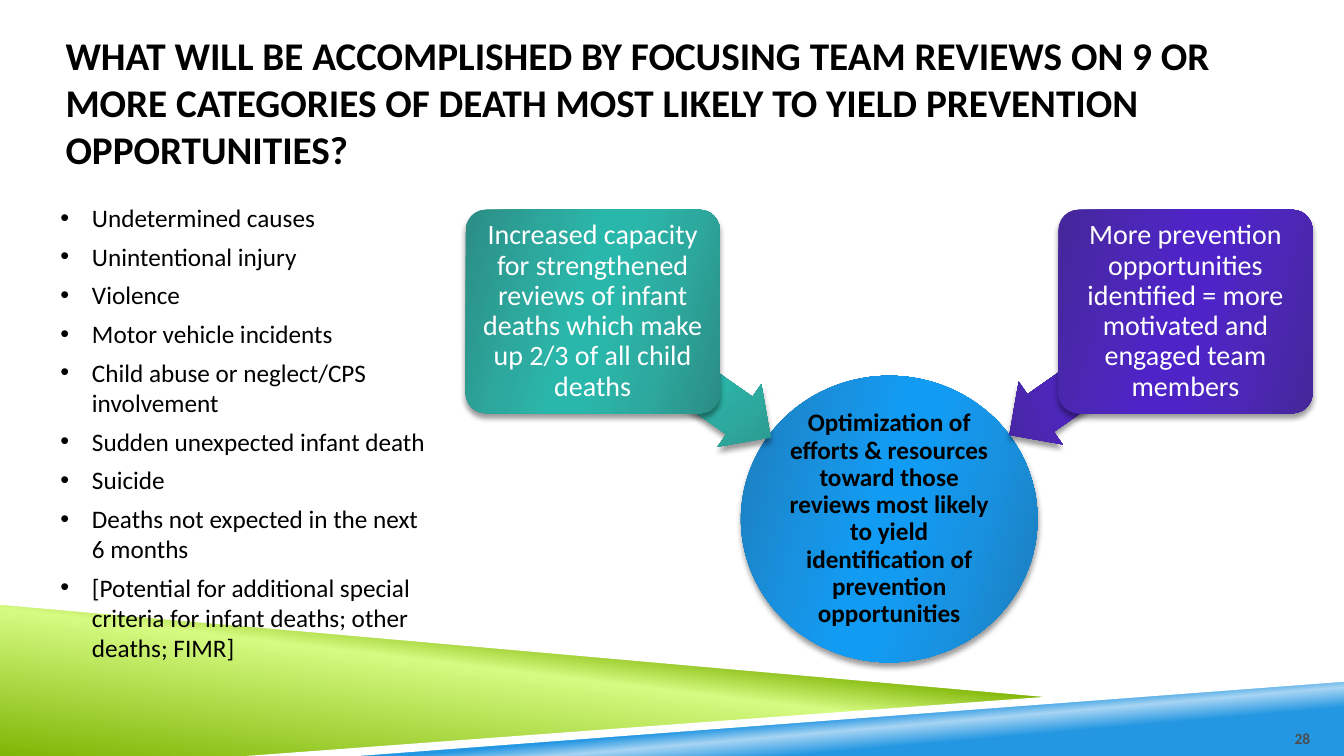
from dataclasses import dataclass

from lxml.etree import SubElement
from pptx import Presentation
from pptx.dml.color import RGBColor
from pptx.enum.shapes import MSO_SHAPE
from pptx.enum.text import MSO_ANCHOR, MSO_AUTO_SIZE, PP_ALIGN
from pptx.oxml.ns import qn
from pptx.util import Pt


@dataclass(frozen=True)
class Theme:
    font: str = "Calibri"
    black: str = "000000"
    white: str = "FFFFFF"
    gray: str = "4D4D4D"
    green: tuple = ((0, "80B606"), (52, "D6FB82"), (66, "80B606"))
    sky: tuple = ((28, "2397E2"), (40, "A7D5F3"), (48, "2397E2"))
    blue: tuple = ("1D7CB9", "1892E1", "129BF3")
    teal: tuple = ("2B8D85", "2DAA9F", "2AB7AB")
    purple: tuple = ("452799", "4D27B9", "4E23C8")
    head: int = 28
    card: int = 20
    body: int = 18
    foot: int = 11


theme = Theme()


def write(frame, text, size=theme.body, color=theme.black, bold=False,
          align=PP_ALIGN.LEFT, anchor=MSO_ANCHOR.MIDDLE, inset=(0, 0, 0, 0),
          after=0, lead=1.0, left=0, hang=0):
    frame.word_wrap = True
    frame.auto_size = MSO_AUTO_SIZE.NONE
    frame.vertical_anchor = anchor
    frame.margin_left, frame.margin_top, frame.margin_right, frame.margin_bottom = map(Pt, inset)
    frame.text = text
    for para in frame.paragraphs:
        props = para._p.get_or_add_pPr()
        props.set("marL", str(Pt(left)))
        props.set("indent", str(Pt(-hang)))
        para.alignment = align
        para.line_spacing = lead
        para.space_before = Pt(0)
        para.space_after = Pt(after)
        font = para.font
        font.name, font.size, font.bold = theme.font, Pt(size), bold
        font.color.rgb = RGBColor.from_string(color)


def shade(shape, stops, angle, cast=False):
    shape.line.fill.background()
    shape.shadow.inherit = False
    shape.fill.gradient()
    shape.fill.gradient_angle = 360 - angle
    props = shape._element.spPr
    ramp = props.find(qn("a:gradFill")).find(qn("a:gsLst"))
    ramp.clear()
    for place, color in stops:
        stop = SubElement(ramp, qn("a:gs"), pos=str(place * 1000))
        SubElement(stop, qn("a:srgbClr"), val=color)
    if cast:
        drop = SubElement(props.find(qn("a:effectLst")), qn("a:outerShdw"),
                          blurRad=str(Pt(4)), dist=str(Pt(3.3)), dir="5400000",
                          algn="ctr", rotWithShape="0")
        tint = SubElement(drop, qn("a:srgbClr"), val=theme.black)
        SubElement(tint, qn("a:alpha"), val="40000")


deck = Presentation()
deck.slide_width, deck.slide_height = Pt(960), Pt(540)
slide = deck.slides.add_slide(deck.slide_layouts[1])
shapes = slide.shapes
title, body = shapes.title, slide.placeholders[1]

bands = [
    ([(0, 430), (760, 498), (192, 540), (0, 540)], theme.green, 277),
    ([(190, 540), (960, 484), (960, 540)], theme.sky, 265),
    ([(0, 426), (0, 432), (759, 499), (798.5, 497)], None, 0),
    ([(960, 481.7), (176.4, 540), (255.6, 540), (960, 487.4)], None, 0),
]
for points, stops, angle in bands:
    pen = shapes.build_freeform(*points[0], scale=Pt(1))
    pen.add_line_segments(points[1:], close=True)
    band = pen.convert_to_shape()
    if stops:
        shade(band, stops, angle)
    else:
        band.shadow.inherit = False
        band.line.fill.background()
        band.fill.solid()
        band.fill.fore_color.rgb = RGBColor.from_string(theme.white)

for holder in (title, body):
    shapes._spTree.append(holder._element)

title.left, title.top, title.width, title.height = map(Pt, (46.8, 43.2, 841.7, 59))
write(title.text_frame,
      "WHAT WILL BE ACCOMPLISHED BY FOCUSING TEAM REVIEWS ON 9 OR MORE CATEGORIES "
      "OF DEATH MOST LIKELY TO YIELD PREVENTION OPPORTUNITIES?",
      size=theme.head, bold=True, inset=(0, 3.6, 0, 3.6), after=12)

causes = [
    "Undetermined causes",
    "Unintentional injury",
    "Violence",
    "Motor vehicle incidents",
    "Child abuse or neglect/CPS involvement",
    "Sudden unexpected infant death",
    "Suicide",
    "Deaths not expected in the next 6 months",
    "[Potential for additional special criteria for infant deaths; other deaths; FIMR]",
]
body.left, body.top, body.width, body.height = map(Pt, (0, 141, 313.2, 339))
write(body.text_frame, "\n".join(causes), anchor=MSO_ANCHOR.TOP,
      inset=(7.2, 3.6, 7.2, 3.6), after=6, left=58.5, hang=22.5)

goal = "Optimization of efforts & resources toward those reviews most likely to yield identification of prevention opportunities"
gain = "Increased capacity for strengthened reviews of infant deaths which make up 2/3 of all child deaths"
drive = "More prevention opportunities identified = more motivated and engaged team members"
ball, arrow, card = MSO_SHAPE.OVAL, MSO_SHAPE.LEFT_ARROW, MSO_SHAPE.ROUNDED_RECTANGLE
parts = [
    (ball, (529.2, 268.4, 211.9, 204.7), 0, (), theme.blue, goal),
    (arrow, (418.3, 243.4, 145.4, 54.7), 215, (0.6, 0.5), theme.teal, ""),
    (card, (332.6, 149.8, 181.6, 145.4), 0, (0.1,), theme.teal, gain),
    (arrow, (706.3, 236.9, 162, 54.7), 325, (0.6, 0.5), theme.purple, ""),
    (card, (756, 149.8, 181.6, 145.4), 0, (0.1,), theme.purple, drive),
]
for kind, box, turn, bends, (dark, mid, light), text in parts:
    part = shapes.add_shape(kind, *map(Pt, box))
    part.rotation = turn
    for spot, bend in enumerate(bends):
        part.adjustments[spot] = bend
    shade(part, zip((0, 30, 45, 55, 73, 100), (dark, mid, light, light, mid, dark)), 16, cast=True)
    if kind == ball:
        write(part.text_frame, text, bold=True, align=PP_ALIGN.CENTER,
              inset=(0.9,) * 4, lead=0.9)
    elif kind == card:
        write(part.text_frame, text, size=theme.card, color=theme.white,
              align=PP_ALIGN.CENTER, inset=(2.9,) * 4, lead=0.9)

page = shapes.add_textbox(*map(Pt, (887.8, 505.4, 48.2, 28.8)))
write(page.text_frame, "28", size=theme.foot, color=theme.gray, bold=True,
      align=PP_ALIGN.RIGHT, anchor=MSO_ANCHOR.BOTTOM, inset=(0, 3.6, 0, 0))

deck.save("out.pptx")
